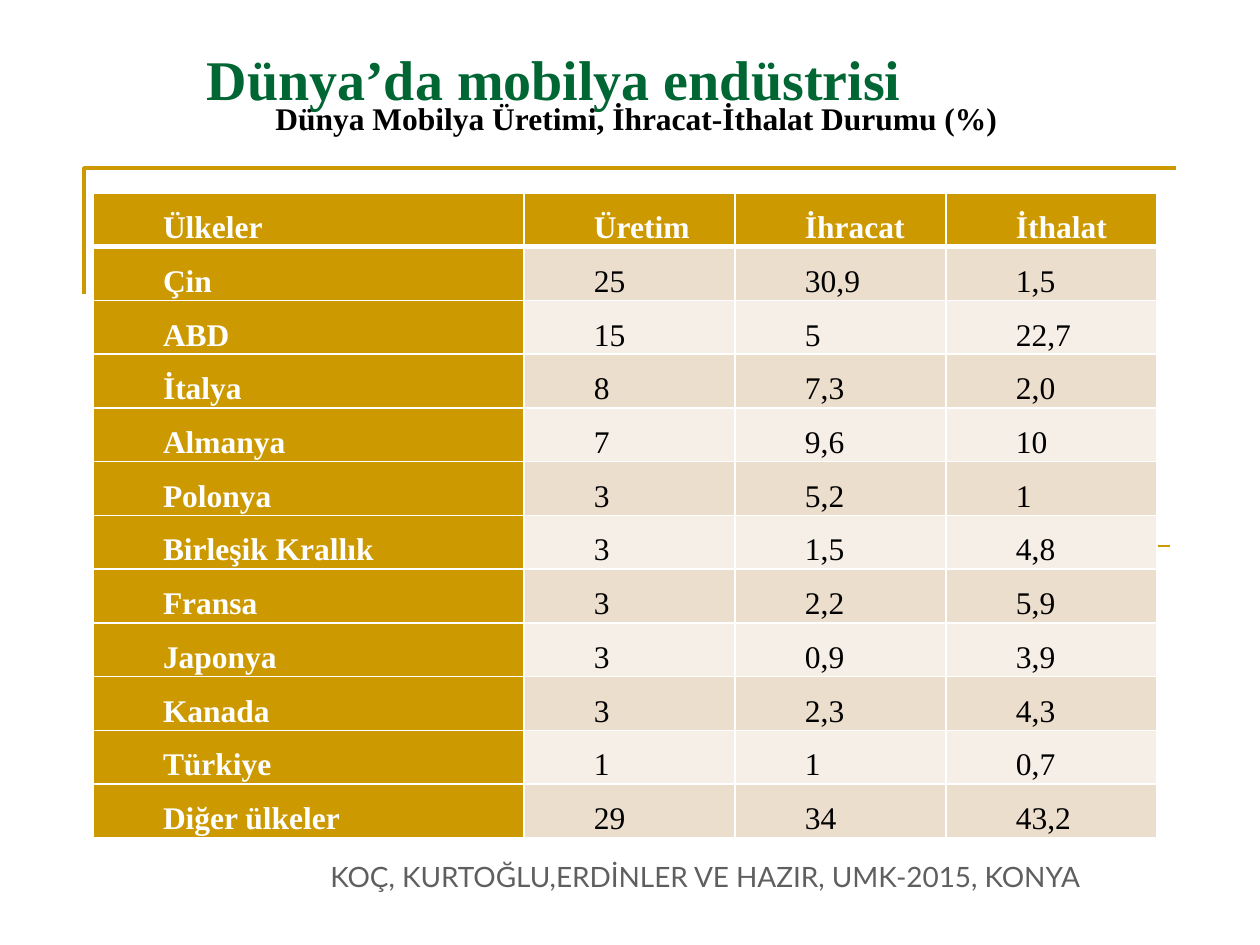
from lxml.etree import SubElement
from pptx import Presentation
from pptx.dml.color import RGBColor
from pptx.enum.shapes import MSO_CONNECTOR
from pptx.enum.text import MSO_ANCHOR, PP_ALIGN as ALIGN
from pptx.oxml.ns import qn
from pptx.util import Pt

PX = 914400 / 126
SERIF = "Times New Roman"
GOLD, WHITE, BLACK = "CC9900", "FFFFFF", "000000"
BANDS = ["ECDECC", "F6EFE7"]
rgb = RGBColor.from_string


def px(*lengths):
    return [round(length * PX) for length in lengths]


def write(frame, text, size, color, bold, align, font=SERIF):
    paragraph = frame.paragraphs[0]
    paragraph.alignment = align
    run = paragraph.add_run()
    run.text = text
    run.font.name, run.font.size, run.font.bold = font, Pt(size), bold
    run.font.color.rgb = rgb(color)
    return paragraph


prs = Presentation()
prs.slide_width, prs.slide_height = px(1260, 945)
slide = prs.slides.add_slide(prs.slide_layouts[5])
shapes = slide.shapes

# Gold corner and rule
builder = shapes.build_freeform(*px(84, 294))
builder.add_line_segments([px(84, 168), px(1176, 168)], close=False)
corner = builder.convert_to_shape()
corner.shadow.inherit = False
corner.fill.background()
corner.line.color.rgb = rgb(GOLD)
corner.line.width = Pt(2)

rule = shapes.add_connector(MSO_CONNECTOR.STRAIGHT, *px(273, 546, 1170, 546))
rule.line.color.rgb = rgb(GOLD)
rule.line.width = Pt(1.5)
SubElement(rule._element.spPr, qn("a:effectLst"))

# Title
title = shapes.title
title.left, title.top, title.width, title.height = px(194, 32, 770, 106)
title.text_frame.vertical_anchor = MSO_ANCHOR.TOP
title.text_frame.margin_top = px(12)[0]
write(title.text_frame, "Dünya’da mobilya endüstrisi", 32, "006633", True, ALIGN.LEFT)

# Production and trade table
rows = [
    ("Ülkeler", "Üretim", "İhracat", "İthalat"),
    ("Çin", "25", "30,9", "1,5"),
    ("ABD", "15", "5", "22,7"),
    ("İtalya", "8", "7,3", "2,0"),
    ("Almanya", "7", "9,6", "10"),
    ("Polonya", "3", "5,2", "1"),
    ("Birleşik Krallık", "3", "1,5", "4,8"),
    ("Fransa", "3", "2,2", "5,9"),
    ("Japonya", "3", "0,9", "3,9"),
    ("Kanada", "3", "2,3", "4,3"),
    ("Türkiye", "1", "1", "0,7"),
    ("Diğer ülkeler", "29", "34", "43,2"),
]
table = shapes.add_table(len(rows), 4, *px(93, 193, 1063, 645)).table
for column, width in zip(table.columns, px(431, 211, 211, 211)):
    column.width = width

for r, row in enumerate(rows):
    for c, value in enumerate(row):
        cell = table.cell(r, c)
        heading = r == 0 or c == 0
        cell.margin_left = cell.margin_right = px(8)[0]
        cell.margin_top = cell.margin_bottom = 0
        paragraph = write(cell.text_frame, value, 18, WHITE if heading else BLACK,
                          heading, ALIGN.JUSTIFY)
        paragraph.line_spacing = 1.5
        paragraph._p.get_or_add_pPr().set("indent", str(px(62)[0]))

        # White borders, thicker below the header row
        for side in "LRTB":
            thick = (r, side) in [(0, "B"), (1, "T")]
            border = SubElement(cell._tc.get_or_add_tcPr(), qn(f"a:ln{side}"),
                                w=str(Pt(3 if thick else 1)))
            fill = SubElement(border, qn("a:solidFill"))
            SubElement(fill, qn("a:srgbClr"), val=WHITE)
        cell.fill.solid()
        cell.fill.fore_color.rgb = rgb(GOLD if heading else BANDS[(r - 1) % 2])

# Subtitle and source line
captions = [
    ("Dünya Mobilya Üretimi, İhracat-İthalat Durumu (%)",
     (115, 93, 1043, 50), 18, BLACK, True, SERIF),
    ("KOÇ, KURTOĞLU,ERDİNLER VE HAZIR, UMK-2015, KONYA",
     (292, 853, 827, 47), 16, "5F5F5F", False, "Lato"),
]
for text, box, size, color, bold, font in captions:
    caption = shapes.add_textbox(*px(*box)).text_frame
    caption.word_wrap = True
    write(caption, text, size, color, bold, ALIGN.CENTER, font)

prs.save("out.pptx")
